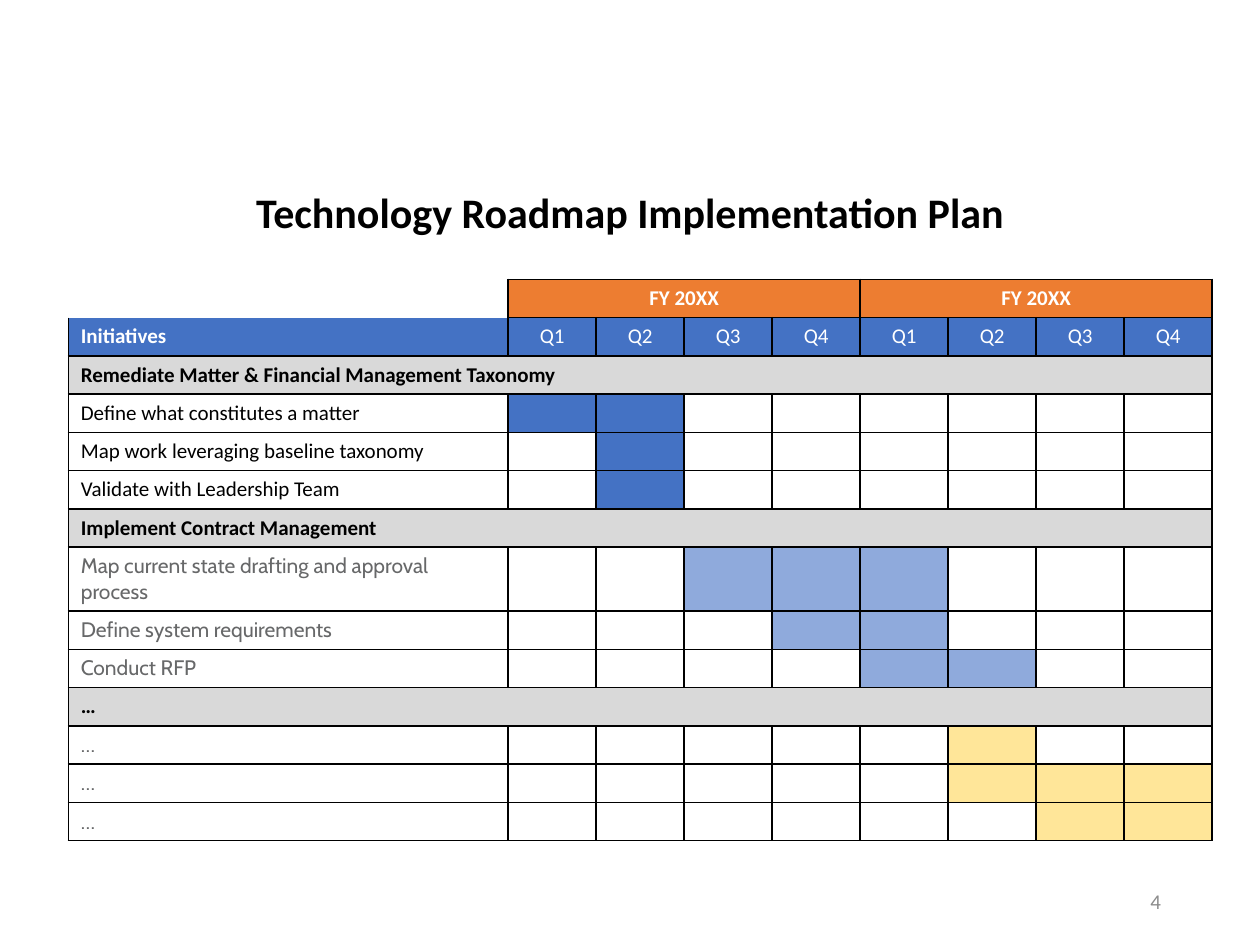
from lxml.etree import SubElement
from pptx import Presentation
from pptx.dml.color import RGBColor
from pptx.enum.text import MSO_ANCHOR, PP_ALIGN
from pptx.oxml.ns import qn
from pptx.util import Pt

HUES = {
    "black": "000000", "white": "FFFFFF", "blue": "4472C4",
    "sky": "8FAADC", "gold": "FFE699", "orange": "ED7D31",
    "band": "D9D9D9", "gray": "676869", "number": "8C8C8C",
}
BODY, ALT = "Calibri", "Cabin"
SIDES = "LRTB"
ROWS = [
    ("Remediate Matter & Financial Management Taxonomy", None),
    ("Define what constitutes a matter", (1, 2, "blue")),
    ("Map work leveraging baseline taxonomy", (2, 2, "blue")),
    ("Validate with Leadership Team", (2, 2, "blue")),
    ("Implement Contract Management", None),
    ("Map current state drafting and approval process", (3, 5, "sky")),
    ("Define system requirements", (4, 5, "sky")),
    ("Conduct RFP", (5, 6, "sky")),
    ("…", None),
    ("…", (6, 6, "gold")),
    ("…", (6, 8, "gold")),
    ("…", (7, 8, "gold")),
]


def color(name):
    return RGBColor.from_string(HUES[name])


def write(frame, text, size=12, face=BODY, hue="black", bold=False,
          align=PP_ALIGN.LEFT):
    para = frame.paragraphs[0]
    para.text = text
    para.alignment = align
    font = para.font
    font.size, font.name, font.bold = Pt(size), face, bold
    font.color.rgb = color(hue)
    return para


def border(cell, sides):
    props = cell._tc.get_or_add_tcPr()
    for side in SIDES:
        line = SubElement(props, qn(f"a:ln{side}"), w=str(Pt(1)))
        if side in sides:
            fill = SubElement(line, qn("a:solidFill"))
            SubElement(fill, qn("a:srgbClr"), val=HUES["black"])
        else:
            SubElement(line, qn("a:noFill"))


def paint(cell, hue=None, sides=SIDES):
    border(cell, sides)
    if hue:
        cell.fill.solid()
        cell.fill.fore_color.rgb = color(hue)
    else:
        cell.fill.background()
    if not cell.text:
        para = cell.text_frame.paragraphs[0]
        SubElement(para._p, qn("a:endParaRPr"), sz="1200")


def head(grid):
    paint(grid.cell(0, 0), sides="R")
    for col in (1, 5):
        year = grid.cell(0, col)
        year.merge(grid.cell(0, col + 3))
        write(year.text_frame, "FY 20XX", hue="white", bold=True,
              align=PP_ALIGN.CENTER)
        year.vertical_anchor = MSO_ANCHOR.MIDDLE
    label = grid.cell(1, 0)
    write(label.text_frame, "Initiatives", hue="white", bold=True)
    paint(label, "blue", "LRB")
    for col in range(1, 9):
        paint(grid.cell(0, col), "orange")
        cell = grid.cell(1, col)
        write(cell.text_frame, f"Q{(col - 1) % 4 + 1}", hue="white",
              align=PP_ALIGN.CENTER)
        cell.vertical_anchor = MSO_ANCHOR.MIDDLE
        paint(cell, "blue")


def group(grid, row, text):
    first = grid.cell(row, 0)
    first.merge(grid.cell(row, 8))
    write(first.text_frame, text, bold=True)
    for col in range(9):
        paint(grid.cell(row, col), "band")


def task(grid, row, text, span):
    start, end, hue = span
    plain = hue == "blue"
    label = grid.cell(row, 0)
    write(label.text_frame, text, face=BODY if plain else ALT,
          hue="black" if plain else "gray")
    paint(label)
    for col in range(1, 9):
        paint(grid.cell(row, col), hue if start <= col <= end else None)


def plan(slide):
    grid = slide.shapes.add_table(
        len(ROWS) + 2, 9, Pt(39), Pt(159.6), Pt(654), Pt(320)).table
    grid.first_row = grid.horz_banding = False
    for idx, col in enumerate(grid.columns):
        col.width = Pt(50.3 if idx else 251.4)
    for row in grid.rows:
        row.height = Pt(21.8)
    grid.rows[7].height = Pt(36.4)
    head(grid)
    for row, (text, span) in enumerate(ROWS, 2):
        if span:
            task(grid, row, text, span)
        else:
            group(grid, row, text)


def title(slide):
    box = slide.shapes.title
    box.left, box.top, box.width, box.height = (
        Pt(49.5), Pt(92), Pt(621), Pt(62))
    box.text_frame.vertical_anchor = MSO_ANCHOR.MIDDLE
    para = write(box.text_frame, "Technology Roadmap Implementation Plan",
                 size=24, bold=True, align=PP_ALIGN.CENTER)
    para.line_spacing = 0.9


def number(slide):
    box = slide.shapes.add_textbox(Pt(508.5), Pt(500.5), Pt(162), Pt(28.75))
    frame = box.text_frame
    frame.word_wrap = True
    frame.vertical_anchor = MSO_ANCHOR.MIDDLE
    write(frame, "4", hue="number", align=PP_ALIGN.RIGHT)


def main():
    deck = Presentation()
    deck.slide_width, deck.slide_height = Pt(720), Pt(540)
    slide = deck.slides.add_slide(deck.slide_layouts[5])
    title(slide)
    plan(slide)
    number(slide)
    deck.save("out.pptx")


if __name__ == "__main__":
    main()
